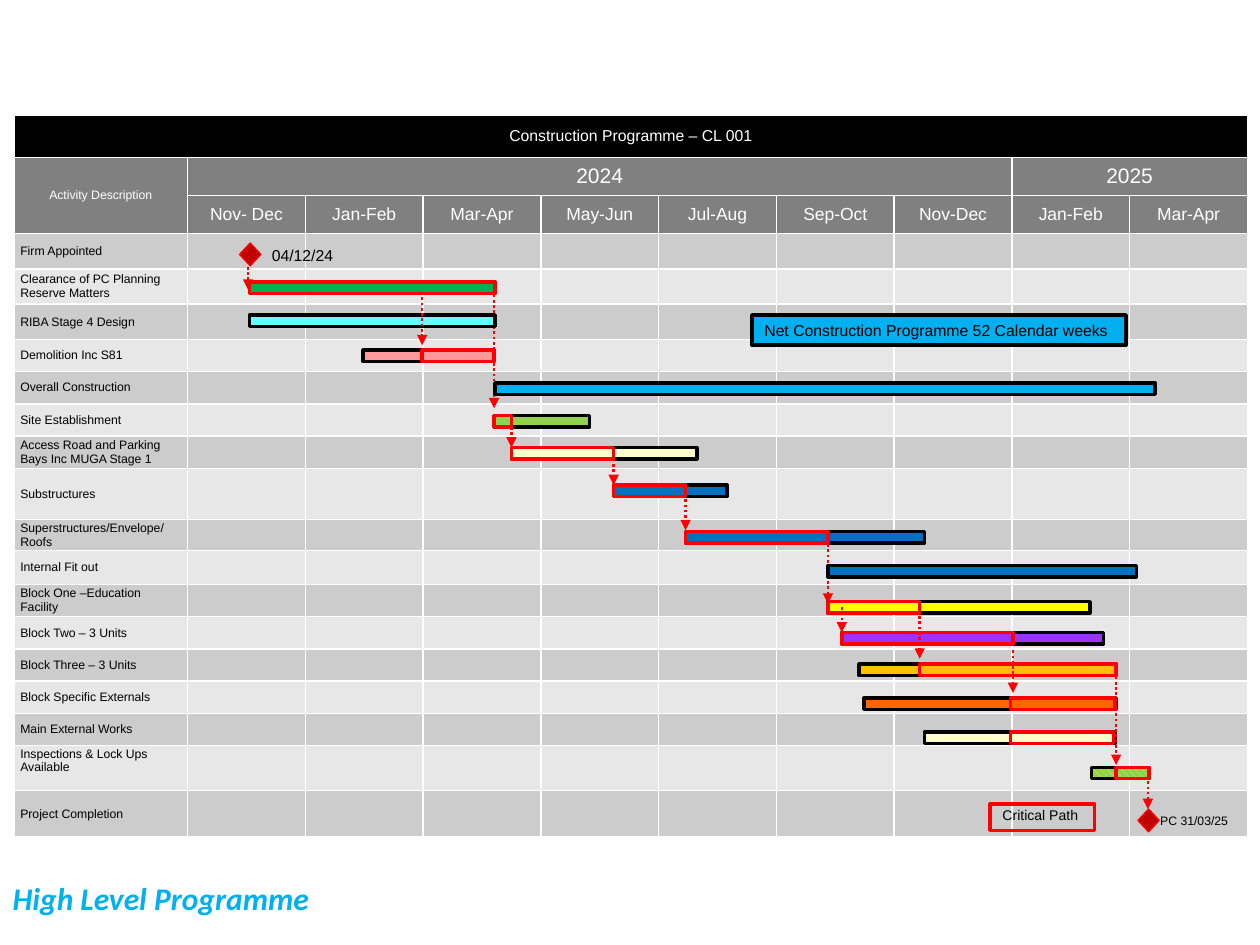
from lxml import etree
from pptx import Presentation
from pptx.dml.color import RGBColor
from pptx.enum.dml import MSO_LINE, MSO_PATTERN
from pptx.enum.shapes import MSO_CONNECTOR, MSO_SHAPE
from pptx.enum.text import MSO_ANCHOR, PP_ALIGN
from pptx.oxml.ns import qn
from pptx.util import Cm, Pt

RECT, DIAMOND = MSO_SHAPE.RECTANGLE, MSO_SHAPE.DIAMOND
STRAIGHT, DOTTED = MSO_CONNECTOR.STRAIGHT, MSO_LINE.ROUND_DOT
LEFT, CENTER = PP_ALIGN.LEFT, PP_ALIGN.CENTER
TOP, MIDDLE = MSO_ANCHOR.TOP, MSO_ANCHOR.MIDDLE
HATCH = MSO_PATTERN.WIDE_DOWNWARD_DIAGONAL

COLORS = {
    "black": "000000", "white": "FFFFFF", "header": "808080",
    "band_dark": "CCCCCC", "band_light": "E7E7E7", "red": "FF0000",
    "dark_red": "C00000", "sky": "00B0F0", "green": "00B050",
    "aqua": "66FFFF", "pink": "FF9999", "lime": "92D050",
    "cream": "FFFFCC", "blue": "0070C0", "yellow": "FFFF00",
    "purple": "9933FF", "amber": "FFC000", "orange": "FF6600",
}
COLORS = {name: RGBColor.from_string(value) for name, value in COLORS.items()}


def write(tf, text, size, color, align=LEFT, anchor=MIDDLE, font="Arial"):
    tf.text = text
    tf.word_wrap = True
    tf.vertical_anchor = anchor
    for p in tf.paragraphs:
        p.alignment = align
        for r in p.runs:
            r.font.name, r.font.size = font, Pt(size)
            r.font.color.rgb = COLORS[color]


def add_box(kind, x, y, w, h, fill, line, weight):
    """Add an outlined shape, hollow when fill is None; lengths in cm."""
    sp = slide.shapes.add_shape(kind, Cm(x), Cm(y), Cm(w), Cm(h))
    sp.shadow.inherit = False
    if fill:
        sp.fill.solid()
        sp.fill.fore_color.rgb = COLORS[fill]
    else:
        sp.fill.background()
    sp.line.color.rgb = COLORS[line]
    sp.line.width = Pt(weight)
    return sp


prs = Presentation()
prs.slide_width, prs.slide_height = Cm(25.4), Cm(19.05)
slide = prs.slides.add_slide(prs.slide_layouts[5])

# Title
title = slide.shapes.title
title.left, title.top, title.width, title.height = Cm(0), Cm(17.6), Cm(12.37), Cm(1.02)
write(title.text_frame, "High Level Programme", 18, "sky", font="Calibri")
title_font = title.text_frame.paragraphs[0].runs[0].font
title_font.bold = title_font.italic = True

# Programme table
periods = ["Nov- Dec", "Jan-Feb", "Mar-Apr", "May-Jun", "Jul-Aug",
           "Sep-Oct", "Nov-Dec", "Jan-Feb", "Mar-Apr"]
activities = [
    "Firm Appointed", "Clearance of PC Planning Reserve Matters",
    "RIBA Stage 4 Design", "Demolition Inc S81", "Overall Construction",
    "Site Establishment", "Access Road and Parking Bays Inc MUGA Stage 1",
    "Substructures", "Superstructures/Envelope/\nRoofs", "Internal Fit out",
    "Block One –Education Facility", "Block Two – 3 Units",
    "Block Three – 3 Units", "Block Specific Externals",
    "Main External Works", "Inspections & Lock Ups\nAvailable",
    "Project Completion",
]
row_heights = ([0.84, 0.77, 0.77] + [0.71] * 3 + [0.65] * 4
               + [1.03, 0.63, 0.68] + [0.65] * 5 + [0.91, 0.93])
n_rows, n_cols = len(row_heights), len(periods) + 1
table = slide.shapes.add_table(n_rows, n_cols, Cm(0.28), Cm(2.33),
                               Cm(24.87), Cm(sum(row_heights))).table
table.first_row = table.horz_banding = False
for row, height in zip(table.rows, row_heights):
    row.height = Cm(height)
for i, column in enumerate(table.columns):
    column.width = Cm(21.37 / len(periods)) if i else Cm(3.5)

for i in range(n_rows):
    if i == 0:
        fill = "black"
    elif i < 3:
        fill = "header"
    else:
        fill = "band_dark" if i % 2 else "band_light"
    for j in range(n_cols):
        cell = table.cell(i, j)
        cell.fill.solid()
        cell.fill.fore_color.rgb = COLORS[fill]
        cell.margin_left = cell.margin_right = Cm(0.13)
        cell.margin_top = cell.margin_bottom = Cm(0.03)
        # Small end mark, so that empty cells do not stretch their row
        p = cell.text_frame.paragraphs[0]
        etree.SubElement(p._p, qn("a:endParaRPr"), sz="700")

for first, last in [((0, 0), (0, 9)), ((1, 0), (2, 0)),
                    ((1, 1), (1, 7)), ((1, 8), (1, 9))]:
    table.cell(*first).merge(table.cell(*last))

headings = [(0, 0, "Construction Programme – CL 001", 9),
            (1, 0, "Activity Description", 7), (1, 1, "2024", 12), (1, 8, "2025", 12)]
headings += [(2, j, period, 10) for j, period in enumerate(periods, 1)]
for i, j, text, size in headings:
    cell = table.cell(i, j)
    write(cell.text_frame, text, size, "white", CENTER)
    cell.vertical_anchor = MIDDLE
for i, text in enumerate(activities, 3):
    cell = table.cell(i, 0)
    write(cell.text_frame, text, 7, "black")
    cell.vertical_anchor = TOP if text.startswith("Inspections") else MIDDLE

# Bars: top, start, end, fill, critical start and end
bars = [
    (5.69, 5.03, 9.98, "green", (5.03, 9.98)),
    (6.35, 5.03, 9.98, "aqua", None),
    (7.06, 7.32, 9.96, "pink", (8.51, 9.96)),
    (7.72, 9.98, 23.29, "sky", None),
    (8.38, 9.96, 11.89, "lime", (9.96, 10.31)),
    (9.02, 10.31, 14.05, "cream", (10.31, 12.37)),
    (9.78, 12.37, 14.66, "blue", (12.37, 13.82)),
    (10.72, 13.82, 18.64, "blue", (13.82, 16.69)),
    (11.4, 16.69, 22.91, "blue", None),
    (12.13, 16.69, 21.97, "yellow", (16.69, 18.54)),
    (12.75, 16.97, 22.25, "purple", (16.97, 20.42)),
    (13.39, 17.32, 22.5, "amber", (18.54, 22.5)),
    (14.07, 17.42, 22.5, "orange", (20.37, 22.48)),
    (14.76, 18.64, 22.48, "cream", (20.37, 22.45)),
    (15.47, 22, 23.16, "lime", (22.5, 23.16)),
]
# Links: x, top, bottom
links_behind = [(9.96, 5.94, 8.23), (13.82, 9.96, 10.69), (16.69, 10.97, 12.17)]
links_in_front = [
    (5, 5.38, 5.84), (8.51, 5.89, 6.96), (10.31, 8.61, 9.02),
    (12.37, 9.25, 9.78), (16.97, 12.24, 12.75), (18.54, 12.42, 13.28),
    (20.42, 13.11, 13.97), (22.5, 13.64, 15.42), (23.14, 15.75, 16.31),
]
for links, layer_bars in [(links_behind, bars), (links_in_front, [])]:
    for x, top, bottom in links:
        link = slide.shapes.add_connector(STRAIGHT, Cm(x), Cm(top), Cm(x), Cm(bottom))
        link.line.color.rgb = COLORS["red"]
        link.line.width = Pt(1.5)
        link.line.dash_style = DOTTED
        etree.SubElement(link.line._get_or_add_ln(), qn("a:tailEnd"), type="triangle")
        etree.SubElement(link._element.spPr, qn("a:effectLst"))
    for top, start, end, fill, critical in layer_bars:
        bar = add_box(RECT, start, top, end - start, 0.23, fill, "black", 2)
        if critical:
            start, end = critical
            add_box(RECT, start, top, end - start, 0.23, None, "red", 2)
        if top == bars[-1][0]:
            bar.fill.patterned()
            bar.fill.pattern = HATCH
            bar.fill.fore_color.rgb = COLORS["yellow"]
            bar.fill.back_color.rgb = COLORS["lime"]

# Milestones, callout and key
for x, y in [(4.83, 4.9), (22.94, 16.31)]:
    add_box(DIAMOND, x, y, 0.43, 0.46, "dark_red", "red", 0.75)
callout = add_box(RECT, 15.16, 6.35, 7.54, 0.61, "sky", "black", 2)
write(callout.text_frame, "Net Construction Programme 52 Calendar weeks", 9, "black")
add_box(RECT, 19.96, 16.21, 2.11, 0.53, None, "red", 2)
for text, x, y, w, h, size in [("04/12/24", 5.23, 4.83, 3.58, 0.64, 9),
                               ("PC 31/03/25", 23.14, 16.26, 2.03, 0.56, 7),
                               ("Critical Path", 19.96, 16.13, 2.11, 0.61, 8)]:
    label = slide.shapes.add_textbox(Cm(x), Cm(y), Cm(w), Cm(h))
    write(label.text_frame, text, size, "black", anchor=TOP)

prs.save("out.pptx")
